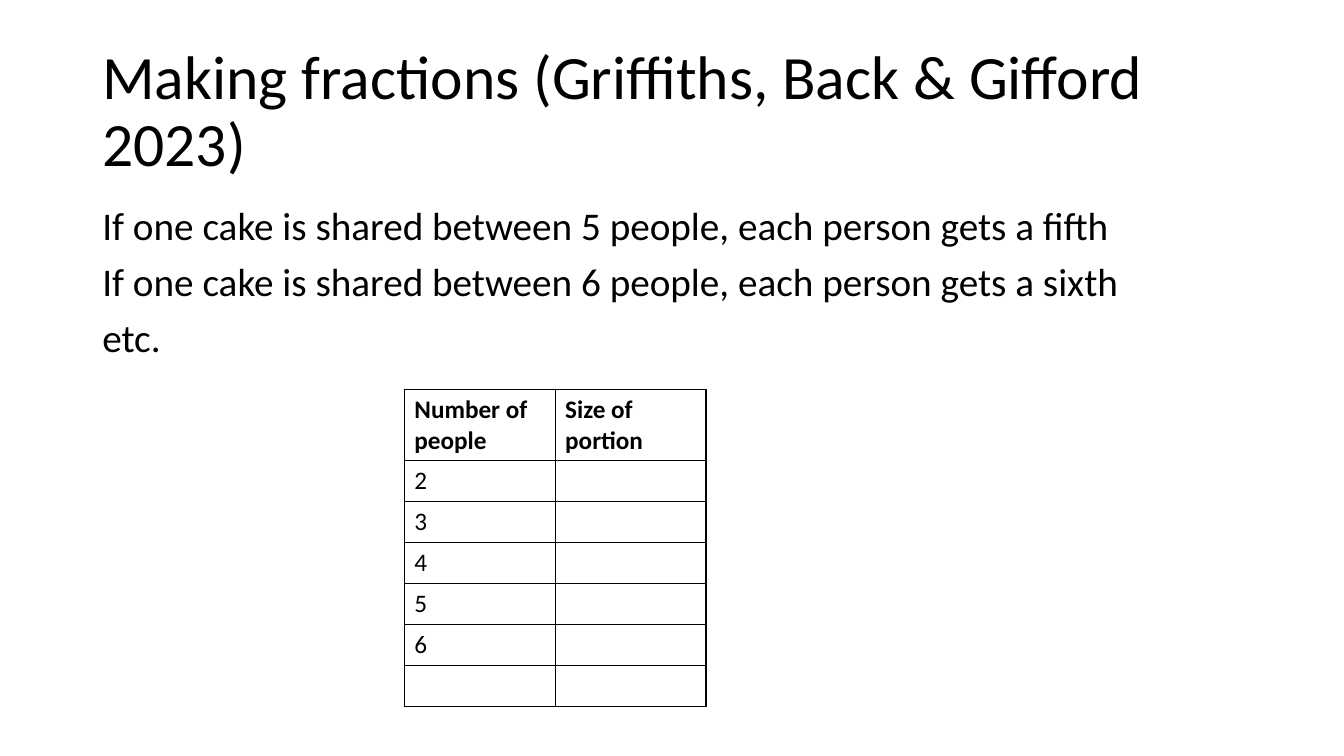
from dataclasses import dataclass
from typing import NamedTuple

from lxml.etree import SubElement
from pptx import Presentation
from pptx.dml.color import RGBColor
from pptx.enum.text import MSO_ANCHOR as Anchor
from pptx.oxml.ns import qn
from pptx.util import Cm, Pt


@dataclass(frozen=True)
class Theme:
    font: str = "Calibri"
    ink: str = "000000"
    title_size: int = 44
    body_size: int = 28
    table_size: int = 18
    border: int = 1


class Box(NamedTuple):
    """An area of the page, in centimetres."""
    left: float
    top: float
    width: float
    height: float

    def lengths(self):
        return [Cm(value) for value in self]


THEME = Theme()
TITLE = "Making fractions (Griffiths, Back & Gifford 2023)"
EXAMPLES = [
    "If one cake is shared between 5 people, each person gets a fifth",
    "If one cake is shared between 6 people, each person gets a sixth",
    "etc.",
]
PORTIONS = [("Number of people", "Size of portion")]
PORTIONS += [(str(people), "") for people in range(2, 7)]
PORTIONS += [("", "")]
HEADER_HEIGHT = 1.79


def write_para(para, text, size, bold=False, **spacing):
    for name, value in spacing.items():
        setattr(para, name, value)
    # An empty cell takes its height from the paragraph's font.
    target = para
    if text:
        target = para.add_run()
        target.text = text
    font = target.font
    for name, value in {"name": THEME.font, "size": Pt(size), "bold": bold}.items():
        setattr(font, name, value)
    font.color.rgb = RGBColor.from_string(THEME.ink)


def add_text(page, box, lines, size, anchor=Anchor.TOP, **spacing):
    frame = page.shapes.add_textbox(*box.lengths()).text_frame
    frame.word_wrap = True
    frame.vertical_anchor = anchor
    for index, line in enumerate(lines):
        para = frame.add_paragraph() if index else frame.paragraphs[0]
        write_para(para, line, size, line_spacing=0.9, **spacing)


def add_borders(cell):
    properties = cell._tc.get_or_add_tcPr()
    for position, side in enumerate(("lnL", "lnR", "lnT", "lnB")):
        line = properties.makeelement(qn(f"a:{side}"), {"w": str(Pt(THEME.border))})
        fill = SubElement(line, qn("a:solidFill"))
        SubElement(fill, qn("a:srgbClr"), val=THEME.ink)
        properties.insert(position, line)


def add_portion_table(page, box):
    row_count, column_count = len(PORTIONS), len(PORTIONS[0])
    table = page.shapes.add_table(row_count, column_count, *box.lengths()).table
    table.first_row = table.horz_banding = False
    row_height = (box.height - HEADER_HEIGHT) / (row_count - 1)
    for index, texts in enumerate(PORTIONS):
        is_header = index == 0
        table.rows[index].height = Cm(HEADER_HEIGHT if is_header else row_height)
        for column, text in enumerate(texts):
            cell = table.cell(index, column)
            cell.fill.background()
            add_borders(cell)
            write_para(cell.text_frame.paragraphs[0], text, THEME.table_size, is_header)


def build_fractions_page(deck):
    page = deck.slides.add_slide(deck.slide_layouts[6])
    add_text(page, Box(2.33, 1.01, 29.21, 3.68), [TITLE], THEME.title_size, Anchor.MIDDLE)
    add_text(page, Box(2.33, 5.07, 29.21, 12.09), EXAMPLES, THEME.body_size,
             space_before=Pt(10))
    add_portion_table(page, Box(10.19, 9.81, 7.6, 7.99))


def main():
    deck = Presentation()
    deck.slide_width, deck.slide_height = Cm(33.87), Cm(19.05)
    build_fractions_page(deck)
    deck.save("out.pptx")


if __name__ == "__main__":
    main()
